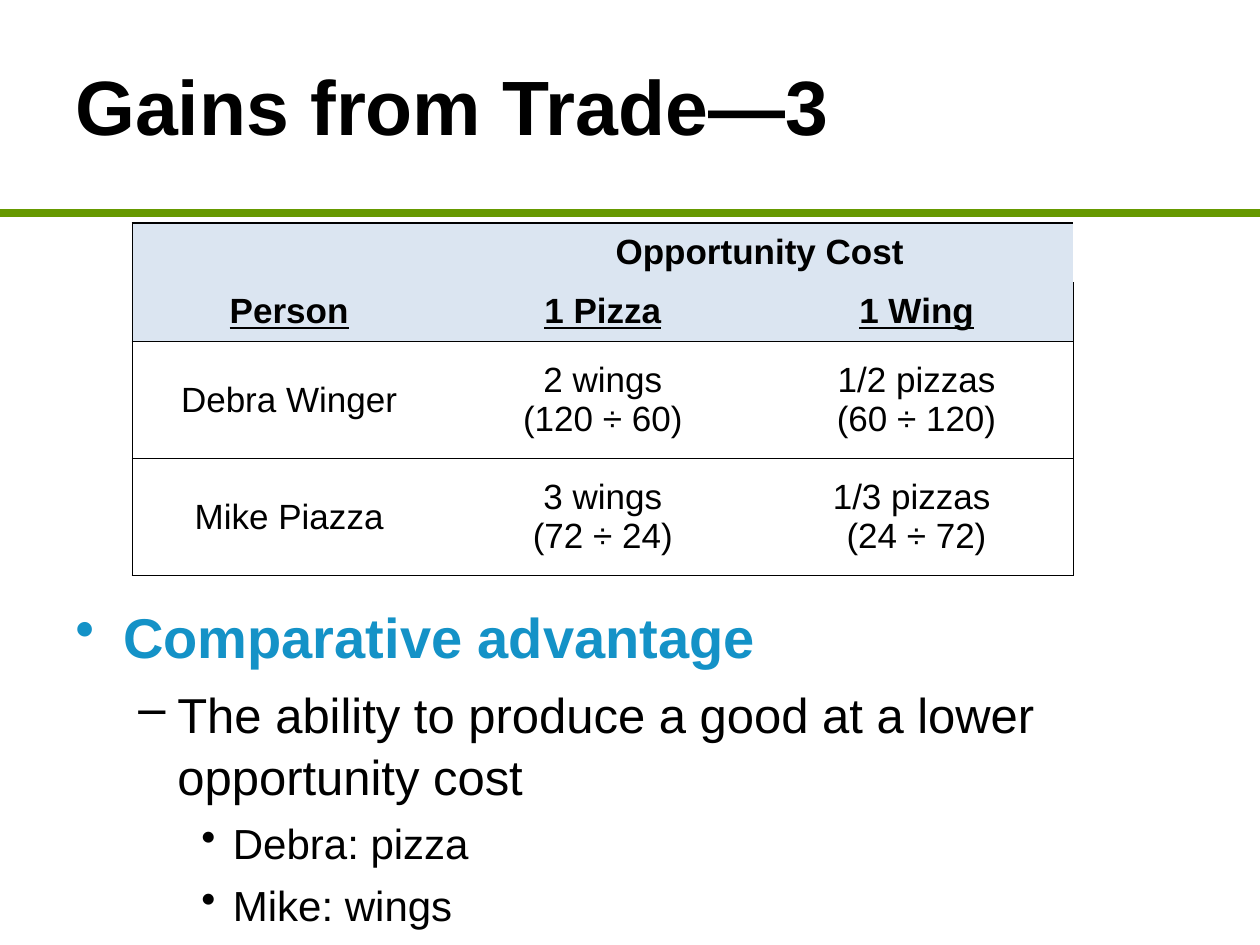
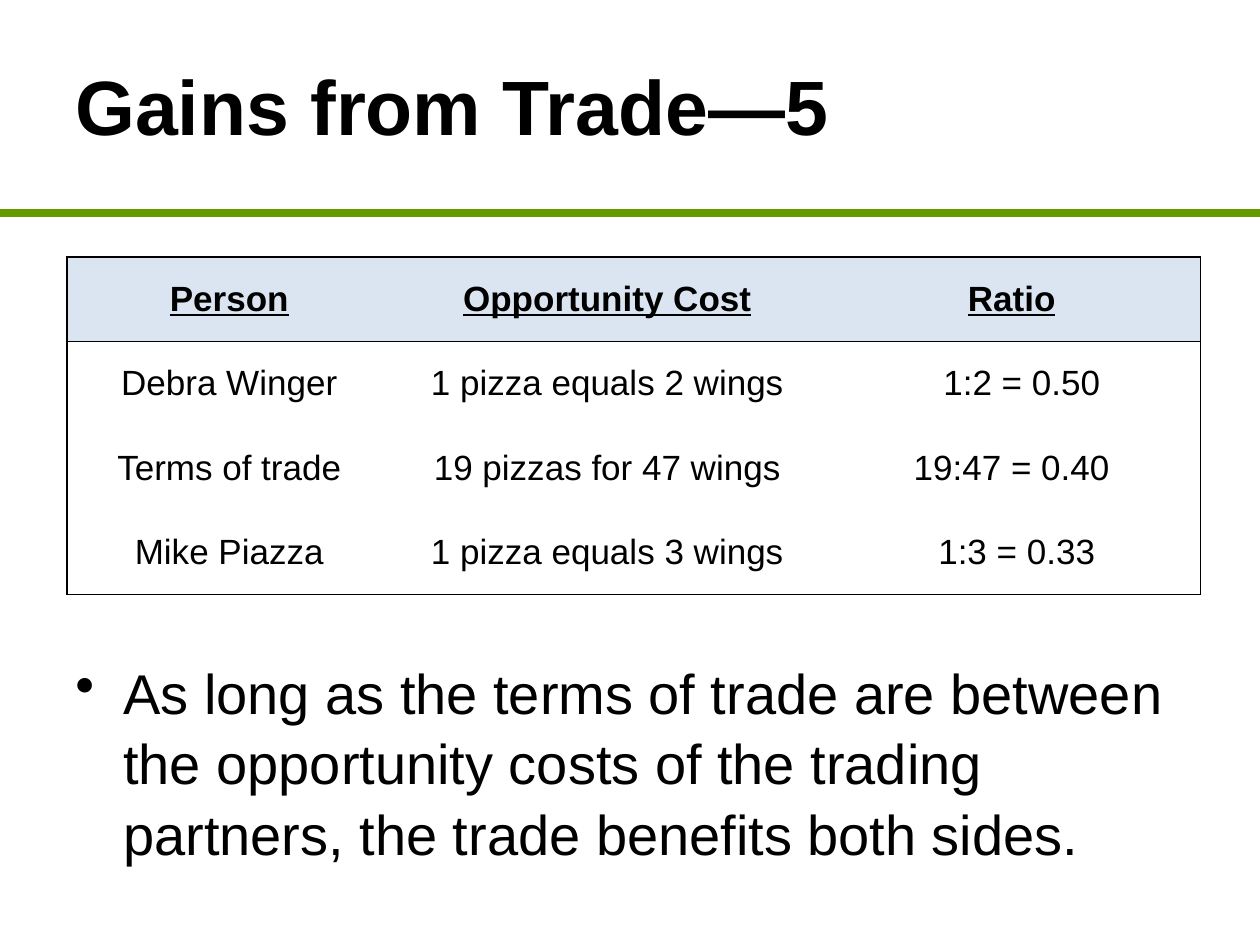
from lxml.etree import SubElement
from pptx import Presentation
from pptx.dml.color import RGBColor
from pptx.enum.shapes import MSO_CONNECTOR as Connector
from pptx.enum.text import MSO_ANCHOR as Anchor, PP_ALIGN as Align
from pptx.oxml import parse_xml
from pptx.oxml.ns import nsdecls, qn
from pptx.util import Inches, Pt

FONT = "Arial"
BLACK, GREEN, BLUE, HEADER_FILL = "000000", "669900", "1492C7", "DBE5F1"
BULLETS = [
    {"size": 32, "left": 0.38, "hanging": 0.38, "mark": "•"},
    {"size": 28, "left": 0.81, "hanging": 0.31, "mark": "–"},
    {"size": 24, "left": 1.25, "hanging": 0.25, "mark": "•"},
]


def rgb(color):
    return RGBColor.from_string(color)


def set_values(target, values):
    for name, value in values.items():
        setattr(target, name, value)


def write(paragraph, text, size, color=BLACK, **style):
    run = paragraph.add_run()
    run.text = text
    set_values(run.font, {"name": FONT, "size": Pt(size), **style})
    run.font.color.rgb = rgb(color)


def add_text_frame(slide, box, anchor):
    frame = slide.shapes.add_textbox(*map(Inches, box)).text_frame
    set_values(frame, {"word_wrap": True, "vertical_anchor": anchor})
    return frame


def add_title(slide, box, title):
    frame = add_text_frame(slide, box, Anchor.MIDDLE)
    write(frame.paragraphs[0], title, 44, bold=True)


def add_rule(slide, top, width):
    rule = slide.shapes.add_connector(
        Connector.STRAIGHT, 0, Inches(top), Inches(width), Inches(top))
    rule.line.color.rgb = rgb(GREEN)
    rule.line.width = Pt(4.5)
    SubElement(rule._element.spPr, qn("a:effectLst"))


def add_bullets(slide, box, items):
    frame = add_text_frame(slide, box, Anchor.TOP)
    for index, (level, text, style) in enumerate(items):
        paragraph = frame.add_paragraph() if index else frame.paragraphs[0]
        bullet = BULLETS[level]
        set_values(paragraph, {"level": level, "line_spacing": 1.05,
                               "space_before": Pt(0.23 * bullet["size"])})
        write(paragraph, text, bullet["size"], **style)
        properties = paragraph._p.get_or_add_pPr()
        properties.set("marL", str(Inches(bullet["left"])))
        properties.set("indent", str(-Inches(bullet["hanging"])))
        SubElement(properties, qn("a:buChar"), char=bullet["mark"])


def set_borders(cell, sides):
    properties = cell._tc.get_or_add_tcPr()
    for index, side in enumerate("LRTB"):
        fill = (f'<a:solidFill><a:srgbClr val="{BLACK}"/></a:solidFill>'
                if side in sides else "<a:noFill/>")
        properties.insert(index, parse_xml(
            f'<a:ln{side} {nsdecls("a")} w="{Pt(1)}">{fill}</a:ln{side}>'))


def fill_cell(cell, text, is_header, underline, shift):
    set_values(cell, {"vertical_anchor": Anchor.MIDDLE,
                      "margin_left": Inches(0.07 + shift), "margin_right": Inches(0.07),
                      "margin_top": 0, "margin_bottom": 0})
    if is_header:
        cell.fill.solid()
        cell.fill.fore_color.rgb = rgb(HEADER_FILL)
    else:
        cell.fill.background()
    for index, line in enumerate(text.split("\n") if text else []):
        paragraph = cell.text_frame.add_paragraph() if index else cell.text_frame.paragraphs[0]
        paragraph.alignment = Align.CENTER
        write(paragraph, line, 20, bold=is_header, underline=underline)


def add_cost_table(slide, left, top, widths, heights, rows, header_rows, ruled_rows,
                   heading_span=None, shifts=None):
    table = slide.shapes.add_table(
        len(heights), len(widths),
        *map(Inches, (left, top, sum(widths), sum(heights)))).table
    set_values(table, {"first_row": False, "horz_banding": False})
    for column, width in zip(table.columns, widths):
        column.width = Inches(width)
    for row, height in zip(table.rows, heights):
        row.height = Inches(height)
    last_column = len(widths) - 1
    for r, texts in enumerate(rows):
        for c, text in enumerate(texts):
            cell = table.cell(r, c)
            fill_cell(cell, text, r < header_rows, r == header_rows - 1,
                      (shifts or {}).get((r, c), 0))
            edges = {"L": c == 0, "R": c == last_column,
                     "T": r == 0 or r - 1 in ruled_rows, "B": r in ruled_rows}
            set_borders(cell, [side for side, shown in edges.items() if shown])
    if heading_span:
        first, last = heading_span
        table.cell(0, first).merge(table.cell(0, last))


def add_trade_slide(presentation, title, table, bullet_box, bullets):
    slide = presentation.slides.add_slide(presentation.slide_layouts[6])
    add_rule(slide, 1.69, 10)
    add_bullets(slide, bullet_box, bullets)
    add_cost_table(slide, **table)
    add_title(slide, (0.5, 0, 9, 1.67), title)


def main():
    presentation = Presentation()
    set_values(presentation, {"slide_width": Inches(10), "slide_height": Inches(7.5)})
    comparative_costs = {
        "left": 1.05, "top": 1.77, "widths": [2.49] * 3,
        "heights": [0.47, 0.47, 0.93, 0.93],
        "header_rows": 2, "ruled_rows": {1, 2, 3}, "heading_span": (1, 2),
        "rows": [
            ["", "Opportunity Cost", ""],
            ["Person", "1 Pizza", "1 Wing"],
            ["Debra Winger", "2 wings\n(120 ÷ 60)", "1/2 pizzas\n(60 ÷ 120)"],
            ["Mike Piazza", "3 wings\n(72 ÷ 24)", "1/3 pizzas \n(24 ÷ 72)"],
        ],
    }
    add_trade_slide(
        presentation, "Gains from Trade—3", comparative_costs, (0.5, 4.71, 9, 2.59),
        [(0, "Comparative advantage", {"color": BLUE, "bold": True}),
         (1, "The ability to produce a good at a lower opportunity cost", {}),
         (2, "Debra: pizza", {}),
         (2, "Mike: wings", {})])
    trade_terms = {
        "left": 0.53, "top": 2.04, "widths": [2.58, 3.42, 3],
        "heights": [0.67] * 4, "header_rows": 1, "ruled_rows": {0, 3},
        "shifts": {(1, 2): 0.16, (3, 2): 0.08},
        "rows": [
            ["Person", "Opportunity Cost", "Ratio"],
            ["Debra Winger", "1 pizza equals 2 wings", "1:2 = 0.50"],
            ["Terms of trade", "19 pizzas for 47 wings", "19:47 = 0.40"],
            ["Mike Piazza", "1 pizza equals 3 wings", "1:3 = 0.33"],
        ],
    }
    add_trade_slide(
        presentation, "Gains from Trade—5", trade_terms, (0.5, 5.15, 9, 2.07),
        [(0, "As long as the terms of trade are between the opportunity costs of "
             "the trading partners, the trade benefits both sides.", {})])
    presentation.save("out.pptx")


if __name__ == "__main__":
    main()
